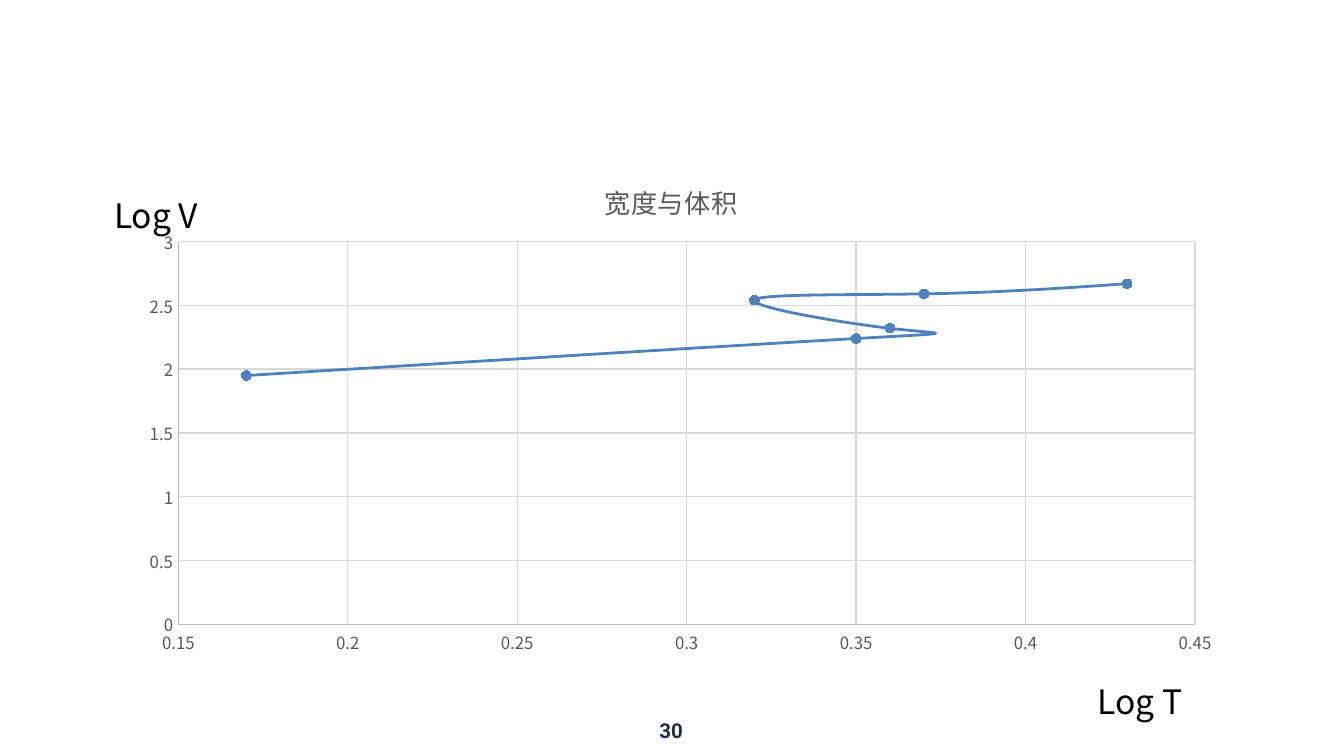
"""Build a slide with a smooth scatter chart of log volume against log width."""

from dataclasses import dataclass

from lxml.etree import SubElement
from pptx import Presentation
from pptx.chart.axis import ValueAxis
from pptx.chart.chart import Chart
from pptx.chart.data import XyChartData
from pptx.chart.series import XySeries
from pptx.dml.color import RGBColor
from pptx.enum.chart import XL_CHART_TYPE, XL_MARKER_STYLE, XL_TICK_MARK
from pptx.enum.text import MSO_ANCHOR, MSO_AUTO_SIZE, PP_ALIGN
from pptx.oxml.ns import qn
from pptx.slide import Slide
from pptx.util import Inches, Pt


@dataclass(frozen=True)
class Theme:
    """Colours, fonts and type sizes."""

    body_font: str = "Noto Sans CJK KR"
    number_font: str = "Roboto"
    black: str = "000000"
    navy: str = "222D47"
    gray: str = "595959"
    axis: str = "BFBFBF"
    grid: str = "D9D9D9"
    series: str = "4F81BD"
    label_size: float = 18
    title_size: float = 14
    number_size: float = 11
    chart_size: float = 10
    tick_size: float = 9
    hairline: float = 0.75
    curve: float = 1.5


@dataclass(frozen=True)
class Label:
    """A single line of text and its place in inches."""

    text: str
    left: float
    top: float
    width: float
    height: float
    size: float
    font: str
    color: str
    bold: bool = False
    centered: bool = False


@dataclass(frozen=True)
class AxisScale:
    """Range and step of a chart axis."""

    minimum: float
    maximum: float
    step: float


THEME = Theme()
TITLE = "宽度与体积"
POINTS = [(0.17, 1.95), (0.35, 2.24), (0.36, 2.32), (0.32, 2.54), (0.37, 2.59), (0.43, 2.67)]
PLOT_AREA = {"x": 0.068, "y": 0.157, "w": 0.891, "h": 0.712}
PAGE_NUMBER = Label("30", 3.83, 5.29, 2.33, 0.28, THEME.number_size, THEME.number_font,
                    THEME.navy, bold=True, centered=True)
AXIS_LABELS = [
    Label(text, left, top, width, 0.4, THEME.label_size, THEME.body_font, THEME.black)
    for text, left, top, width in [("Log T", 8.07, 5.02, 0.85), ("Log V", 0.75, 1.4, 0.88)]
]


def style_font(font, name: str, size: float, color: str, bold: bool = False) -> None:
    """Set the name, size, colour and weight of a font."""
    font.name = name
    font.size = Pt(size)
    font.bold = bold
    font.color.rgb = RGBColor.from_string(color)


def style_line(line, color: str, width: float) -> None:
    """Set the colour and width of a line."""
    line.color.rgb = RGBColor.from_string(color)
    line.width = Pt(width)


def draw_label(page: Slide, label: Label) -> None:
    """Add a text box holding one label."""
    box = page.shapes.add_textbox(
        Inches(label.left), Inches(label.top), Inches(label.width), Inches(label.height))
    frame = box.text_frame
    frame.text = label.text
    frame.word_wrap = label.centered
    frame.auto_size = MSO_AUTO_SIZE.NONE if label.centered else MSO_AUTO_SIZE.SHAPE_TO_FIT_TEXT
    frame.vertical_anchor = MSO_ANCHOR.MIDDLE if label.centered else MSO_ANCHOR.TOP
    paragraph = frame.paragraphs[0]
    paragraph.alignment = PP_ALIGN.CENTER if label.centered else PP_ALIGN.LEFT
    style_font(paragraph.runs[0].font, label.font, label.size, label.color, label.bold)


def style_axis(axis: ValueAxis, scale: AxisScale) -> None:
    """Set the scale, lines and tick labels of an axis."""
    axis.minimum_scale = scale.minimum
    axis.maximum_scale = scale.maximum
    axis.major_unit = scale.step
    axis.major_tick_mark = XL_TICK_MARK.NONE
    axis.minor_tick_mark = XL_TICK_MARK.NONE
    axis.has_major_gridlines = True
    style_line(axis.format.line, THEME.axis, THEME.hairline)
    style_line(axis.major_gridlines.format.line, THEME.grid, THEME.hairline)
    axis.tick_labels.number_format = "General"
    axis.tick_labels.number_format_is_linked = False
    style_font(axis.tick_labels.font, THEME.body_font, THEME.tick_size, THEME.gray)


def place_plot(chart: Chart) -> None:
    """Fix the inner plot area as fractions of the chart."""
    plot_area = chart.plots[0]._element.getparent()
    layout = plot_area.find(qn("c:layout"))
    if layout is None:
        layout = SubElement(plot_area, qn("c:layout"))
        plot_area.insert(0, layout)
    manual = SubElement(layout, qn("c:manualLayout"))
    settings = {"layoutTarget": "inner", "xMode": "edge", "yMode": "edge", **PLOT_AREA}
    for tag, value in settings.items():
        SubElement(manual, qn(f"c:{tag}")).set("val", str(value))


def style_series(series: XySeries) -> None:
    """Smooth and colour the curve and its markers."""
    series._element.get_or_add_smooth().set("val", "1")
    style_line(series.format.line, THEME.series, THEME.curve)
    series.marker.style = XL_MARKER_STYLE.CIRCLE
    series.marker.size = 5
    series.marker.format.fill.solid()
    series.marker.format.fill.fore_color.rgb = RGBColor.from_string(THEME.series)
    style_line(series.marker.format.line, THEME.series, THEME.hairline)


def draw_chart(page: Slide) -> None:
    """Add the smooth scatter chart."""
    data = XyChartData()
    points = data.add_series(TITLE)
    for log_width, log_volume in POINTS:
        points.add_data_point(log_width, log_volume)
    chart = page.shapes.add_chart(
        XL_CHART_TYPE.XY_SCATTER_SMOOTH,
        Inches(0.75), Inches(1.17), Inches(8.49), Inches(4), data).chart
    style_font(chart.font, THEME.body_font, THEME.chart_size, THEME.black)
    chart.has_legend = False
    chart.has_title = True
    title = chart.chart_title.text_frame
    title.text = TITLE
    style_font(title.paragraphs[0].runs[0].font, THEME.body_font, THEME.title_size, THEME.gray)
    style_axis(chart.category_axis, AxisScale(0.15, 0.45, 0.05))
    style_axis(chart.value_axis, AxisScale(0, 3, 0.5))
    place_plot(chart)
    chart.plots[0].vary_by_categories = False
    style_series(chart.plots[0].series[0])


def main() -> None:
    """Build and save the deck."""
    deck = Presentation()
    deck.slide_width = Inches(10)
    deck.slide_height = Inches(10 * 9 / 16)
    page = deck.slides.add_slide(deck.slide_layouts[6])
    draw_label(page, PAGE_NUMBER)
    draw_chart(page)
    for label in AXIS_LABELS:
        draw_label(page, label)
    deck.save("out.pptx")


if __name__ == "__main__":
    main()
